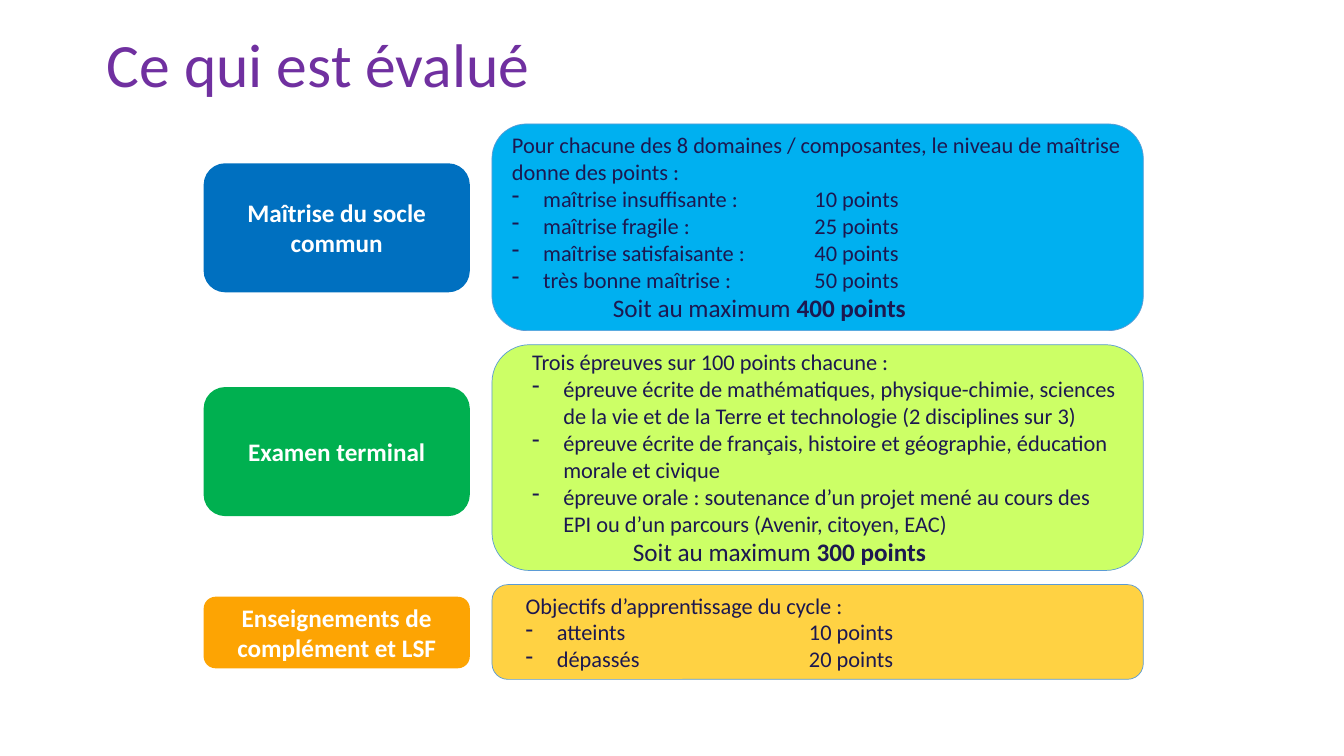
from dataclasses import dataclass

from lxml import etree
from pptx import Presentation
from pptx.dml.color import RGBColor
from pptx.enum import shapes, text
from pptx.oxml import ns
from pptx.util import Inches, Pt

WHITE = RGBColor(0xFF, 0xFF, 0xFF)
PURPLE = RGBColor(0x70, 0x30, 0xA0)
NAVY = RGBColor(0x1C, 0x18, 0x50)
OUTLINE = RGBColor(0x5B, 0x9B, 0xD5)
BLUE = RGBColor(0x00, 0x70, 0xC0)
SKY = RGBColor(0x00, 0xB0, 0xF0)
GREEN = RGBColor(0x00, 0xB0, 0x50)
LIME = RGBColor(0xCC, 0xFF, 0x66)
ORANGE = RGBColor(0xFD, 0xA4, 0x03)
YELLOW = RGBColor(0xFF, 0xD2, 0x43)

LABEL_LEFT, LABEL_WIDTH = 2.02, 2.64
DETAIL_LEFT, DETAIL_WIDTH = 4.88, 6.46
FIRST_TOP, ROW_GAP = 1.23, 0.14
HANGING = 0.31

TITLE_FORMAT = {"name": "Calibri", "size": Pt(44)}
LABEL_FORMAT = {"name": "Calibri", "size": Pt(18), "bold": True}
DETAIL_FORMAT = {"name": "Calibri", "size": Pt(16)}
TOTAL_FORMAT = {"name": "Calibri", "size": Pt(18)}


@dataclass
class Row:
    label: str
    label_top: float
    label_height: float
    label_fill: RGBColor
    height: float
    fill: RGBColor
    indent: float
    intro: str
    items: list[str]
    total: str = ""


ROWS = [
    Row("Maîtrise du socle commun", 1.62, 1.28, BLUE, 2.05, SKY, 0,
        "Pour chacune des 8 domaines / composantes, le niveau de maîtrise donne des points :",
        ["maîtrise insuffisante : \t10 points",
         "maîtrise fragile : \t\t25 points",
         "maîtrise satisfaisante : \t40 points",
         "très bonne maîtrise : \t50 points"],
        "400 points"),
    Row("Examen terminal", 3.84, 1.28, GREEN, 2.24, LIME, 0.19,
        "Trois épreuves sur 100 points chacune :",
        ["épreuve écrite de mathématiques, physique-chimie, sciences de la vie "
         "et de la Terre et technologie (2 disciplines sur 3)",
         "épreuve écrite de français, histoire et géographie, éducation morale et civique",
         "épreuve orale : soutenance d’un projet mené au cours des EPI "
         "ou d’un parcours (Avenir, citoyen, EAC)"],
        "300 points"),
    Row("Enseignements de complément et LSF", 5.92, 0.71, ORANGE, 0.94, YELLOW, 0.19,
        "Objectifs d’apprentissage du cycle :",
        ["atteints\t\t10 points", "dépassés\t\t20 points"]),
]


def add_span(para, wording: str, color: RGBColor, values: dict) -> None:
    span = para.add_run()
    span.text = wording
    for key, value in values.items():
        setattr(span.font, key, value)
    span.font.color.rgb = color


def add_box(page, left: float, top: float, width: float, height: float, fill: RGBColor):
    box = page.shapes.add_shape(
        shapes.MSO_SHAPE.ROUNDED_RECTANGLE,
        Inches(left), Inches(top), Inches(width), Inches(height))
    box.shadow.inherit = False
    box.fill.solid()
    box.fill.fore_color.rgb = fill
    box.text_frame.word_wrap = True
    box.text_frame.vertical_anchor = text.MSO_ANCHOR.MIDDLE
    return box


def format_para(para, indent: float, bullet: bool = False) -> None:
    para.alignment = text.PP_ALIGN.LEFT
    properties = para._p.get_or_add_pPr()
    hanging = HANGING if bullet else 0
    settings = {"marL": Inches(indent + hanging), "indent": Inches(-hanging),
                "defTabSz": Inches(1)}
    for key, value in settings.items():
        properties.set(key, str(int(value)))
    if bullet:
        mark = etree.SubElement(properties, ns.qn("a:buChar"))
        mark.set("char", "-")


def add_label(page, row: Row) -> None:
    box = add_box(page, LABEL_LEFT, row.label_top, LABEL_WIDTH, row.label_height, row.label_fill)
    box.line.fill.background()
    para = box.text_frame.paragraphs[0]
    para.alignment = text.PP_ALIGN.CENTER
    add_span(para, row.label, WHITE, LABEL_FORMAT)


def add_detail(page, row: Row, top: float) -> None:
    box = add_box(page, DETAIL_LEFT, top, DETAIL_WIDTH, row.height, row.fill)
    box.line.color.rgb = OUTLINE
    box.line.width = Pt(0.5)
    frame = box.text_frame
    intro = frame.paragraphs[0]
    format_para(intro, row.indent)
    add_span(intro, row.intro, NAVY, DETAIL_FORMAT)
    for item in row.items:
        para = frame.add_paragraph()
        format_para(para, row.indent, bullet=True)
        add_span(para, item, NAVY, DETAIL_FORMAT)
    if row.total:
        para = frame.add_paragraph()
        format_para(para, row.indent)
        add_span(para, "\t", NAVY, DETAIL_FORMAT)
        add_span(para, "Soit au maximum ", NAVY, TOTAL_FORMAT)
        add_span(para, row.total, NAVY, TOTAL_FORMAT | {"bold": True})


def add_title(page) -> None:
    title = page.shapes.title
    place = {"left": 0.96, "top": -0.05, "width": 11.5, "height": 1.45}
    for key, value in place.items():
        setattr(title, key, Inches(value))
    frame = title.text_frame
    frame.word_wrap = True
    frame.auto_size = text.MSO_AUTO_SIZE.NONE
    frame.vertical_anchor = text.MSO_ANCHOR.MIDDLE
    para = frame.paragraphs[0]
    para.alignment = text.PP_ALIGN.LEFT
    para.line_spacing = 0.9
    add_span(para, "Ce qui est évalué", PURPLE, TITLE_FORMAT)


def main() -> None:
    deck = Presentation()
    deck.slide_width, deck.slide_height = Inches(13.33), Inches(7.5)
    page = deck.slides.add_slide(deck.slide_layouts.get_by_name("Title Only"))
    add_title(page)
    top = FIRST_TOP
    for row in ROWS:
        add_label(page, row)
        add_detail(page, row, top)
        top += row.height + ROW_GAP
    deck.save("out.pptx")


if __name__ == "__main__":
    main()
